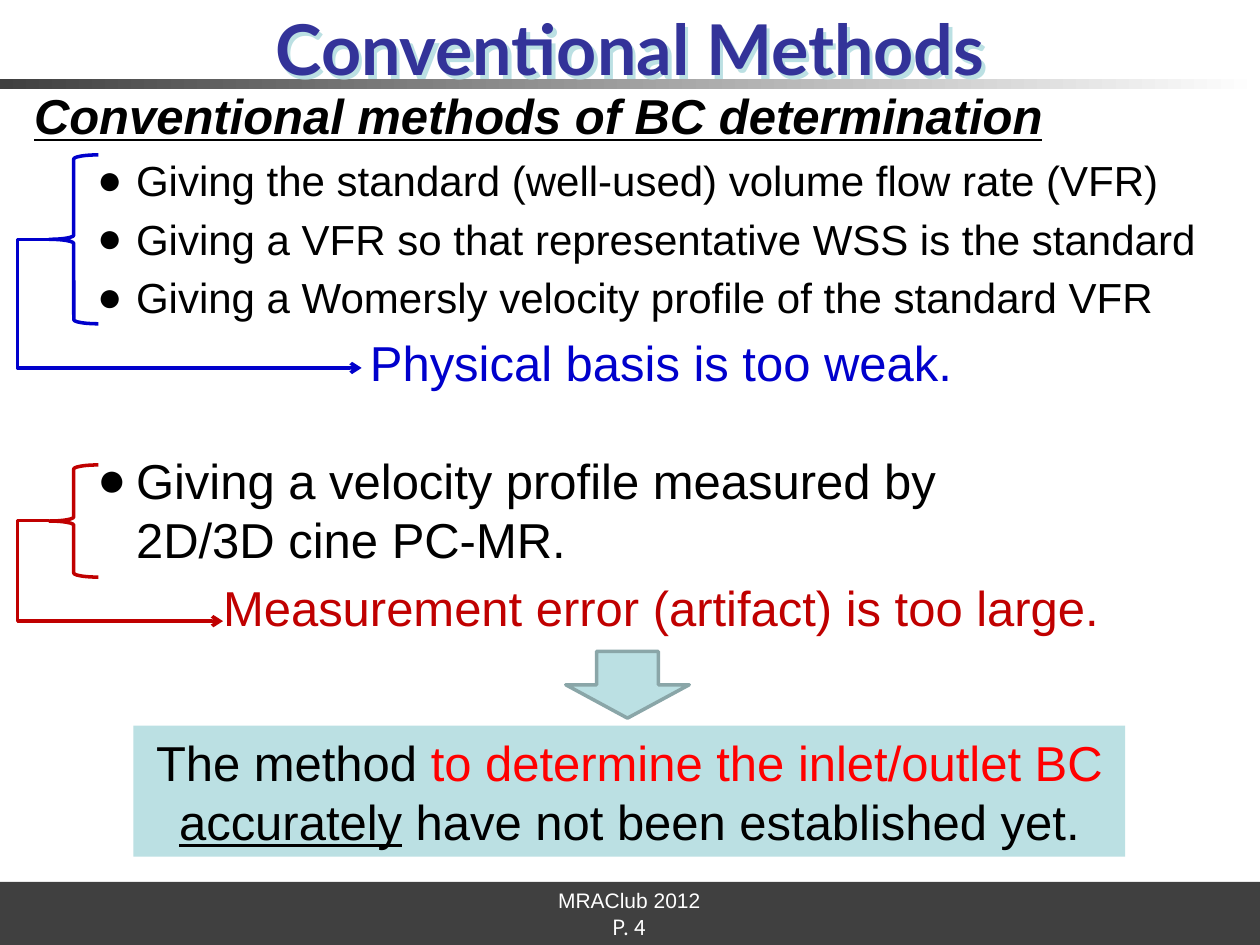
from dataclasses import dataclass

from pptx import Presentation
from pptx.dml.color import RGBColor
from pptx.enum import shapes, text
from pptx.oxml import parse_xml
from pptx.oxml.ns import nsdecls, qn
from pptx.util import Inches, Pt

COLORS = {
    "ink": "000000", "white": "FFFFFF", "bar": "404040", "title": "333399",
    "blue": "0000CC", "dark_red": "C00000", "red": "FF0000",
    "pale": "BBE0E3", "arrow_edge": "8AA6A8",
}
SHAPE = shapes.MSO_SHAPE
CENTER = text.PP_ALIGN.CENTER
MIDDLE = text.MSO_ANCHOR.MIDDLE


@dataclass
class Line:
    text: str
    size: int
    before: float
    color: str = "ink"
    kind: str = "bullet"


@dataclass
class Bracket:
    """A brace around some bullets and the elbow arrow to their verdict."""
    top: float
    height: float
    elbow_y: float
    tip_x: float
    tip_y: float
    color: str


LINES = [
    Line("Conventional methods of BC determination", 28, 0, kind="heading"),
    Line("Giving the standard (well-used) volume flow rate (VFR)", 24, 5.6),
    Line("Giving a VFR so that representative WSS is the standard", 24, 4.8),
    Line("Giving a Womersly velocity profile of the standard VFR", 24, 4.8),
    Line("Physical basis is too weak.", 28, 5.6, "blue", "verdict"),
    Line("Giving a velocity profile measured by \v2D/3D cine PC-MR.", 28, 34),
    Line("Measurement error (artifact) is too large.", 28, 5.6, "dark_red", "verdict"),
]
BRACKETS = [
    Bracket(1.23, 1.34, 1.9, 2.87, 2.92, "blue"),
    Bracket(3.69, 0.89, 4.13, 1.77, 4.93, "dark_red"),
]
CONCLUSION = [
    ("The method ", "ink", False),
    ("to determine the inlet/outlet BC ", "red", False),
    ("accurately", "ink", True),
    (" have not been established yet.", "ink", False),
]
BRACE_X, BRACE_W, ELBOW_X = 0.39, 0.39, 0.14


def rgb(name: str) -> RGBColor:
    return RGBColor.from_string(COLORS[name])


def style(r, size: float, color: str, font: str = "Arial") -> None:
    r.font.size, r.font.name = Pt(size), font
    r.font.color.rgb = rgb(color)


def add_block(slide, kind, box, fill=None, line=None):
    sp = slide.shapes.add_shape(kind, *map(Inches, box))
    sp.shadow.inherit = False
    if fill:
        sp.fill.solid()
        sp.fill.fore_color.rgb = rgb(fill)
    else:
        sp.fill.background()
    if line:
        sp.line.color.rgb, sp.line.width = rgb(line), Pt(2)
    else:
        sp.line.fill.background()
    return sp


def add_text(slide, box):
    """Add an empty text box without insets and return its frame."""
    tf = slide.shapes.add_textbox(*map(Inches, box)).text_frame
    tf.word_wrap = True
    tf.margin_left = tf.margin_right = tf.margin_top = tf.margin_bottom = 0
    return tf


def add_label(slide, box, label: str, font: str) -> None:
    tf = add_text(slide, box)
    tf.word_wrap = False
    tf.vertical_anchor = MIDDLE
    tf.text = label
    p = tf.paragraphs[0]
    p.alignment = CENTER
    style(p.runs[0], 12, "white", font)


def write_line(p, line: Line) -> None:
    p.text = line.text
    p.space_before = Pt(line.before)
    p.line_spacing = 1.0
    pPr = p._p.get_or_add_pPr()
    if line.kind == "bullet":
        pPr.set("marL", str(Inches(0.81)))
        pPr.set("indent", str(Inches(-0.31)))
        pPr.append(parse_xml(f'<a:buFont {nsdecls("a")} typeface="Arial"/>'))
        pPr.append(parse_xml(f'<a:buChar {nsdecls("a")} char="●"/>'))
    elif line.kind == "verdict":
        pPr.set("marL", str(Inches(0.5)))
        p.alignment = CENTER
    for r in p.runs:
        style(r, line.size, line.color)
        if line.kind == "heading":
            r.font.bold = r.font.italic = r.font.underline = True


def add_bracket(slide, b: Bracket) -> None:
    add_block(slide, SHAPE.LEFT_BRACE, (BRACE_X, b.top, BRACE_W, b.height), line=b.color)
    ends = map(Inches, (BRACE_X, b.elbow_y, b.tip_x, b.tip_y))
    elbow = slide.shapes.add_connector(shapes.MSO_CONNECTOR.ELBOW, *ends)
    elbow.line.color.rgb, elbow.line.width = rgb(b.color), Pt(2)
    spPr = elbow._element.spPr
    bend = round((ELBOW_X - BRACE_X) / (b.tip_x - BRACE_X) * 100000)
    geom = spPr.find(qn("a:prstGeom"))
    for old in list(geom):
        geom.remove(old)
    geom.append(parse_xml(
        f'<a:avLst {nsdecls("a")}><a:gd name="adj1" fmla="val {bend}"/></a:avLst>'))
    spPr.find(qn("a:ln")).append(parse_xml(f'<a:tailEnd {nsdecls("a")} type="arrow"/>'))
    spPr.append(parse_xml(f'<a:effectLst {nsdecls("a")}/>'))


def format_title(title) -> None:
    title.left, title.top, title.width, title.height = map(Inches, (0, 0.04, 10, 0.68))
    tf = title.text_frame
    tf.text = "Conventional Methods"
    tf.margin_left = tf.margin_right = tf.margin_top = tf.margin_bottom = 0
    tf.vertical_anchor = MIDDLE
    p = tf.paragraphs[0]
    p.alignment = CENTER
    r = p.runs[0]
    style(r, 40, "title", "Lato")
    r.font.bold = True
    title.fill.background()
    title._element.spPr.append(parse_xml(
        f'<a:effectLst {nsdecls("a")}><a:outerShdw dist="35921" dir="2700000">'
        f'<a:srgbClr val="{COLORS["pale"]}"/></a:outerShdw></a:effectLst>'))


def main() -> None:
    prs = Presentation()
    prs.slide_width, prs.slide_height = Inches(10), Inches(7.5)
    slide = prs.slides.add_slide(prs.slide_layouts[5])

    add_block(slide, SHAPE.RECTANGLE, (0, 7, 10, 0.5), "bar")
    add_label(slide, (4.41, 7.05, 1.17, 0.19), "MRAClub 2012", "Arial")
    add_label(slide, (4.42, 7.25, 1.15, 0.22), "P. 4", "Noto Sans CJK JP")

    rule = add_block(slide, SHAPE.RECTANGLE, (0, 0.63, 10, 0.08), "bar")
    rule.fill.gradient()
    rule.fill.gradient_angle = 0
    for stop, color in zip(rule.fill.gradient_stops, ("bar", "white")):
        stop.color.rgb = rgb(color)

    title = slide.shapes.title
    format_title(title)
    rule._element.addnext(title._element)  # the title lies over the rule

    tf = add_text(slide, (0.27, 0.68, 9.45, 6.31))
    for i, line in enumerate(LINES):
        write_line(tf.add_paragraph() if i else tf.paragraphs[0], line)

    for b in BRACKETS:
        add_bracket(slide, b)

    box = add_block(slide, SHAPE.RECTANGLE, (1.06, 5.76, 7.87, 1.04), "pale")
    p = box.text_frame.paragraphs[0]
    p.alignment = CENTER
    for words, color, underline in CONCLUSION:
        r = p.add_run()
        r.text = words
        style(r, 28, color)
        r.font.underline = underline
    add_block(slide, SHAPE.DOWN_ARROW, (4.49, 5.17, 0.98, 0.53), "pale", "arrow_edge")

    prs.save("out.pptx")


if __name__ == "__main__":
    main()
